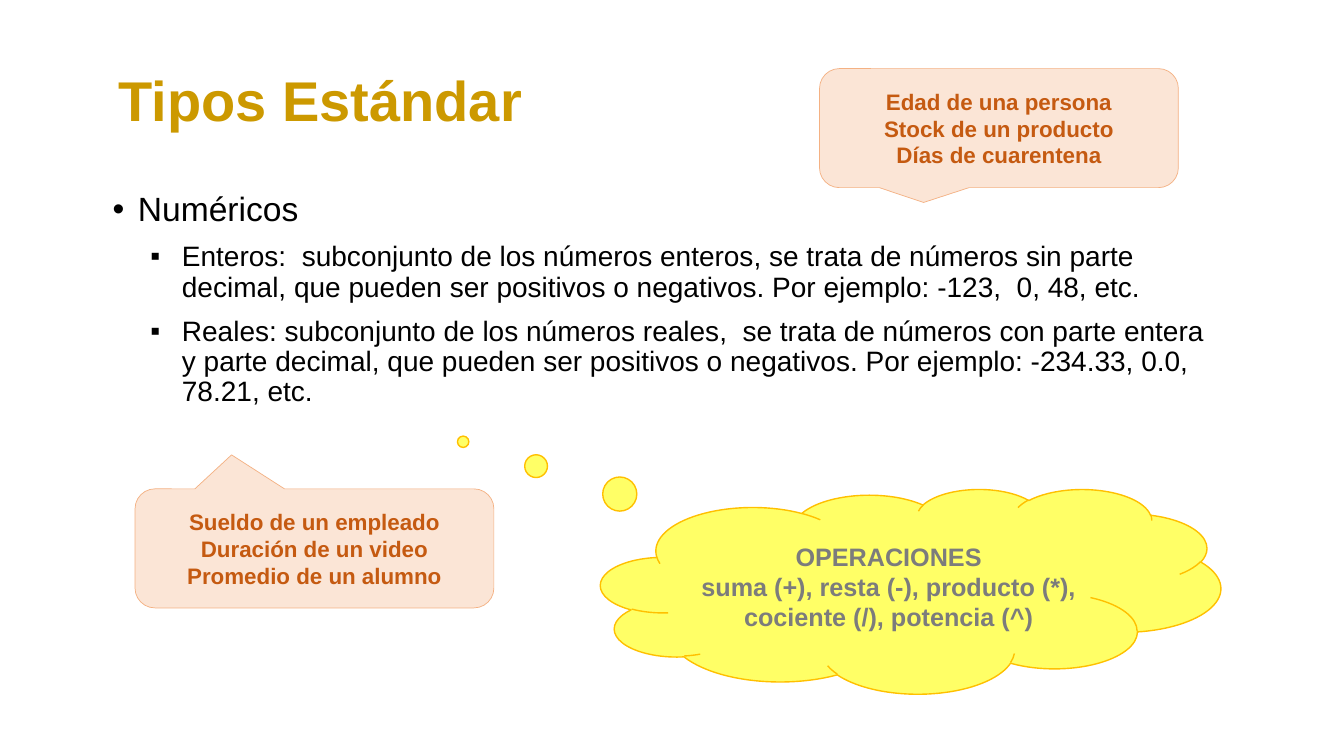
from lxml.etree import SubElement
from pptx import Presentation
from pptx.dml.color import RGBColor
from pptx.enum.shapes import MSO_SHAPE
from pptx.enum.text import MSO_ANCHOR, PP_ALIGN
from pptx.oxml.ns import qn
from pptx.util import Pt


def color(value):
    return RGBColor.from_string(value)


def write(frame, lines, size, ink, bold, paragraph_format):
    frame.word_wrap = True
    for index, line in enumerate(lines):
        para = frame.add_paragraph() if index else frame.paragraphs[0]
        for name, value in paragraph_format.items():
            setattr(para, name, value)
        span = para.add_run()
        span.text = line
        for name, value in {"name": "Arial", "size": Pt(size), "bold": bold}.items():
            setattr(span.font, name, value)
        span.font.color.rgb = color(ink)


deck = Presentation()
deck.slide_width, deck.slide_height = Pt(960), Pt(540)
page = deck.slides.add_slide(deck.slide_layouts[6])

title = page.shapes.add_textbox(Pt(77.8), Pt(49), Pt(794.2), Pt(69.8))
write(title.text_frame, ["Tipos Estándar"], 40, "CC9900", True, {"line_spacing": 0.9})

body = page.shapes.add_textbox(Pt(73.4), Pt(133.9), Pt(800), Pt(367.2))
write(body.text_frame, [
    "Numéricos",
    "Enteros:  subconjunto de los números enteros, se trata de números sin parte decimal, "
    "que pueden ser positivos o negativos. Por ejemplo: -123,  0, 48, etc.",
    "Reales: subconjunto de los números reales,  se trata de números con parte entera y parte decimal, "
    "que pueden ser positivos o negativos. Por ejemplo: -234.33, 0.0, 78.21, etc.",
], 20, "000000", False, {"line_spacing": 0.9, "space_before": Pt(10)})
body.text_frame.paragraphs[0].runs[0].font.size = Pt(24)

bullets = [("•", 18, 18), ("▪", 49.5, 22.5), ("▪", 49.5, 22.5)]
for para, (mark, margin, hanging) in zip(body.text_frame.paragraphs, bullets):
    properties = para._p.get_or_add_pPr()
    properties.set("marL", str(int(Pt(margin))))
    properties.set("indent", str(-int(Pt(hanging))))
    SubElement(properties, qn("a:buFont")).set("typeface", "Arial")
    SubElement(properties, qn("a:buChar")).set("char", mark)

cloud_style = {"kind": MSO_SHAPE.CLOUD_CALLOUT, "fill": "FFFF66", "line": "FFC000",
               "width": 1, "size": 18, "ink": "7C7C7C", "inset": (2.9, 2.9)}
example_style = {"kind": MSO_SHAPE.ROUNDED_RECTANGULAR_CALLOUT, "fill": "FBE5D6", "line": "F4B183",
                 "width": 0.5, "size": 16, "ink": "C55A11", "inset": (7.2, 3.6)}
callouts = [
    (cloud_style, (429.1, 349.2, 442.8, 146.2), (-0.722, -0.73),
     ["OPERACIONES", "suma (+), resta (-), producto (*), cociente (/), potencia (^)"]),
    (example_style, (585.4, 49, 256.3, 85), (-0.21, 0.625),
     ["Edad de una persona", "Stock de un producto", "Días de cuarentena"]),
    (example_style, (96.5, 349.2, 256.3, 85), (-0.231, -0.786),
     ["Sueldo de un empleado", "Duración de un video", "Promedio de un alumno"]),
]
for style, place, tip, lines in callouts:
    callout = page.shapes.add_shape(style["kind"], *map(Pt, place))
    callout.adjustments[0], callout.adjustments[1] = tip
    callout.shadow.inherit = False
    callout.fill.solid()
    callout.fill.fore_color.rgb = color(style["fill"])
    callout.line.color.rgb = color(style["line"])
    callout.line.width = Pt(style["width"])
    side, edge = map(Pt, style["inset"])
    frame_format = {"margin_left": side, "margin_right": side, "margin_top": edge,
                    "margin_bottom": edge, "vertical_anchor": MSO_ANCHOR.MIDDLE}
    for name, value in frame_format.items():
        setattr(callout.text_frame, name, value)
    write(callout.text_frame, lines, style["size"], style["ink"], True, {"alignment": PP_ALIGN.CENTER})

deck.save("out.pptx")
